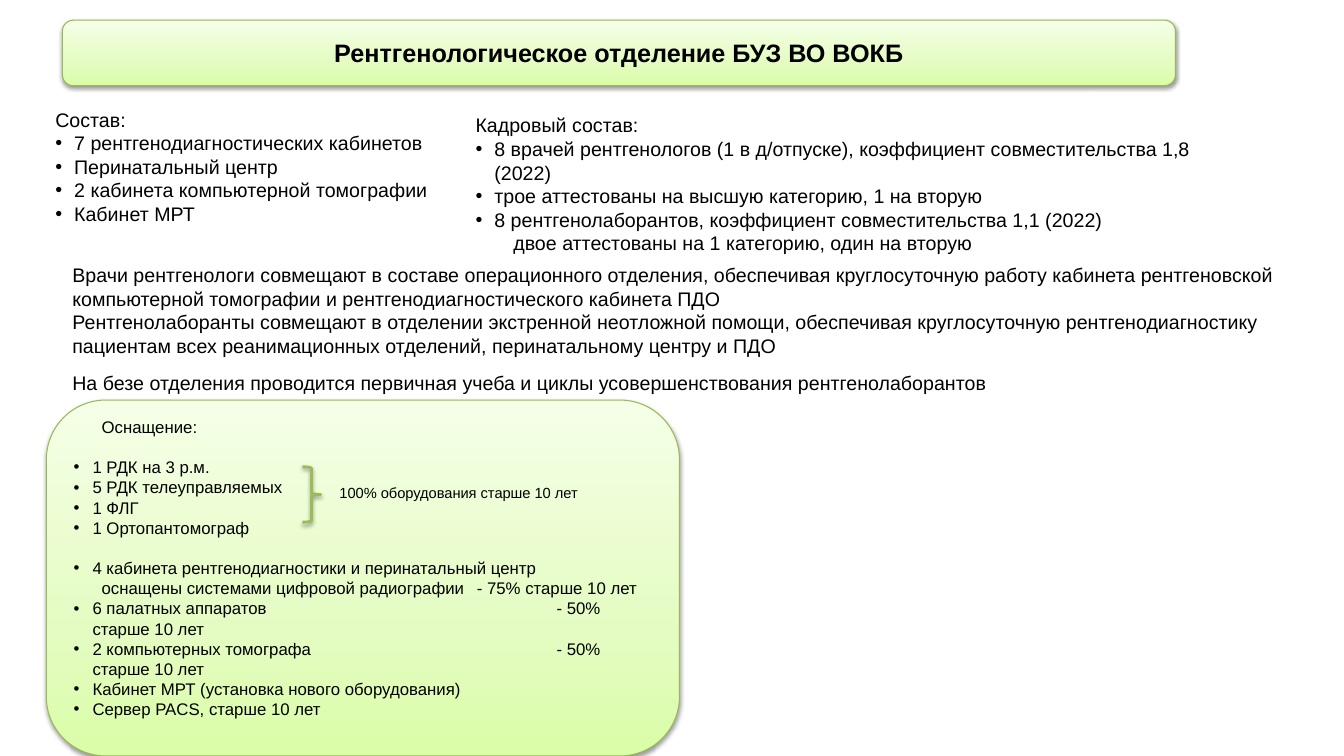
from copy import deepcopy
from lxml import etree
from pptx import Presentation
from pptx import util as u
from pptx.dml.color import RGBColor
from pptx.enum import shapes, text
from pptx.oxml.ns import qn

Pt = u.Pt
COLORS = {"text": "000000", "dark": "DAFDA7", "mid": "E4FCC2", "light": "F5FFE7",
          "border": "98B955", "brace": "9BBB59"}


def write(tf, line, size=14, bold=False, align=text.PP_ALIGN.LEFT,
          bullet=False, indent=0, before=0, tab=None):
    p = tf.paragraphs[0]
    if p.runs:
        p = tf.add_paragraph()
    p.alignment = align
    p.space_before = Pt(before)
    pPr = p._p.get_or_add_pPr()
    pPr.set("marL", str(Pt(13.5 if bullet else 0)))
    pPr.set("indent", str(Pt(-13.5 if bullet else indent)))
    if bullet:
        etree.SubElement(pPr, qn("a:buFont"), typeface="Arial")
        etree.SubElement(pPr, qn("a:buChar"), char="•")
    else:
        etree.SubElement(pPr, qn("a:buNone"))
    if tab:
        tabs = etree.SubElement(pPr, qn("a:tabLst"))
        etree.SubElement(tabs, qn("a:tab"), pos=str(Pt(tab)), algn="l")
    r = p.add_run()
    r.text = line
    r.font.name = "Arial"
    r.font.size = Pt(size)
    r.font.bold = bold
    r.font.color.rgb = RGBColor.from_string(COLORS["text"])


def add_shape(kind, box, line, width, filled=True):
    sp = s.shapes.add_shape(kind, *map(Pt, box))
    sp.line.color.rgb = RGBColor.from_string(COLORS[line])
    sp.line.width = Pt(width)
    if filled:
        sp.fill.gradient()
        sp.fill.gradient_angle = 90
        first = sp._element.spPr.find(".//" + qn("a:gs"))
        first.addnext(deepcopy(first))
        stops = zip(sp.fill.gradient_stops, (0, 0.35, 1), ("dark", "mid", "light"))
        for stop, position, name in stops:
            stop.position = position
            stop.color.rgb = RGBColor.from_string(COLORS[name])
    else:
        sp.fill.background()
    sp.shadow.inherit = False
    effects = sp._element.spPr.find(qn("a:effectLst"))
    shadow = etree.SubElement(effects, qn("a:outerShdw"), blurRad=str(Pt(3.1)),
                              dist=str(Pt(1.6)), dir="5400000", rotWithShape="0")
    color = etree.SubElement(shadow, qn("a:srgbClr"), val=COLORS["text"])
    etree.SubElement(color, qn("a:alpha"), val="38000")
    sp.text_frame.word_wrap = True
    sp.text_frame.vertical_anchor = text.MSO_ANCHOR.MIDDLE
    return sp


prs = Presentation()
prs.slide_width, prs.slide_height = Pt(960), Pt(540)
s = prs.slides.add_slide(prs.slide_layouts[6])

title = add_shape(shapes.MSO_SHAPE.ROUNDED_RECTANGLE, (44.6, 14.4, 795, 46.8), "border", 0.75)
write(title.text_frame, "Рентгенологическое отделение БУЗ ВО ВОКБ",
      size=18, bold=True, align=text.PP_ALIGN.CENTER)

equipment = add_shape(shapes.MSO_SHAPE.ROUNDED_RECTANGLE, (33.1, 285.8, 452.2, 254.2), "border", 0.75)
equipment.text_frame.margin_bottom = Pt(18)
for line, options in [
    ("Оснащение:", {"indent": 20}),
    ("1 РДК на 3 р.м.", {"bullet": True, "before": 14.4}),
    ("5 РДК телеуправляемых", {"bullet": True}),
    ("1 ФЛГ", {"bullet": True}),
    ("1 Ортопантомограф", {"bullet": True}),
    ("4 кабинета рентгенодиагностики и перинатальный центр", {"bullet": True, "before": 14.4}),
    ("оснащены системами цифровой радиографии\t- 75% старше 10 лет", {"indent": 20, "tab": 345}),
    ("6 палатных аппаратов\t- 50% старше 10 лет", {"bullet": True, "tab": 345}),
    ("2 компьютерных томографа\t- 50% старше 10 лет", {"bullet": True, "tab": 345}),
    ("Кабинет МРТ (установка нового оборудования)", {"bullet": True}),
    ("Сервер PACS, старше 10 лет", {"bullet": True}),
]:
    write(equipment.text_frame, line, size=12, **options)

add_shape(shapes.MSO_SHAPE.RIGHT_BRACE, (216, 333.4, 13, 39.6), "brace", 2, filled=False)

item = {"bullet": True}
for box, lines in [
    ((32.4, 73.4, 366.5, 108.7), [
        ("Состав:", {}),
        ("7 рентгенодиагностических кабинетов", item),
        ("Перинатальный центр", item),
        ("2 кабинета компьютерной томографии", item),
        ("Кабинет МРТ", item)]),
    ((332.6, 77.4, 568.8, 92.2), [
        ("Кадровый состав:", {}),
        ("8 врачей рентгенологов (1 в д/отпуске), коэффициент совместительства 1,8 (2022)", item),
        ("трое аттестованы на высшую категорию, 1 на вторую", item),
        ("8 рентгенолаборантов, коэффициент совместительства 1,1 (2022)", item),
        ("двое аттестованы на 1 категорию, один на вторую", {"indent": 27})]),
    ((235.4, 342, 200.2, 32.4), [("100% оборудования старше 10 лет", {"size": 10.5})]),
    ((44.6, 184.3, 872.6, 74.9), [
        ("Врачи рентгенологи совмещают в составе операционного отделения, обеспечивая "
         "круглосуточную работу кабинета рентгеновской компьютерной томографии и "
         "рентгенодиагностического кабинета ПДО", {}),
        ("Рентгенолаборанты совмещают в отделении экстренной неотложной помощи, обеспечивая "
         "круглосуточную рентгенодиагностику пациентам всех реанимационных отделений, "
         "перинатальному центру и ПДО", {})]),
    ((44.6, 261.4, 781.9, 24.5), [
        ("На безе отделения проводится первичная учеба и циклы усовершенствования "
         "рентгенолаборантов", {})]),
]:
    tf = s.shapes.add_textbox(*map(Pt, box)).text_frame
    tf.word_wrap = True
    for line, options in lines:
        write(tf, line, **options)

prs.save("out.pptx")
